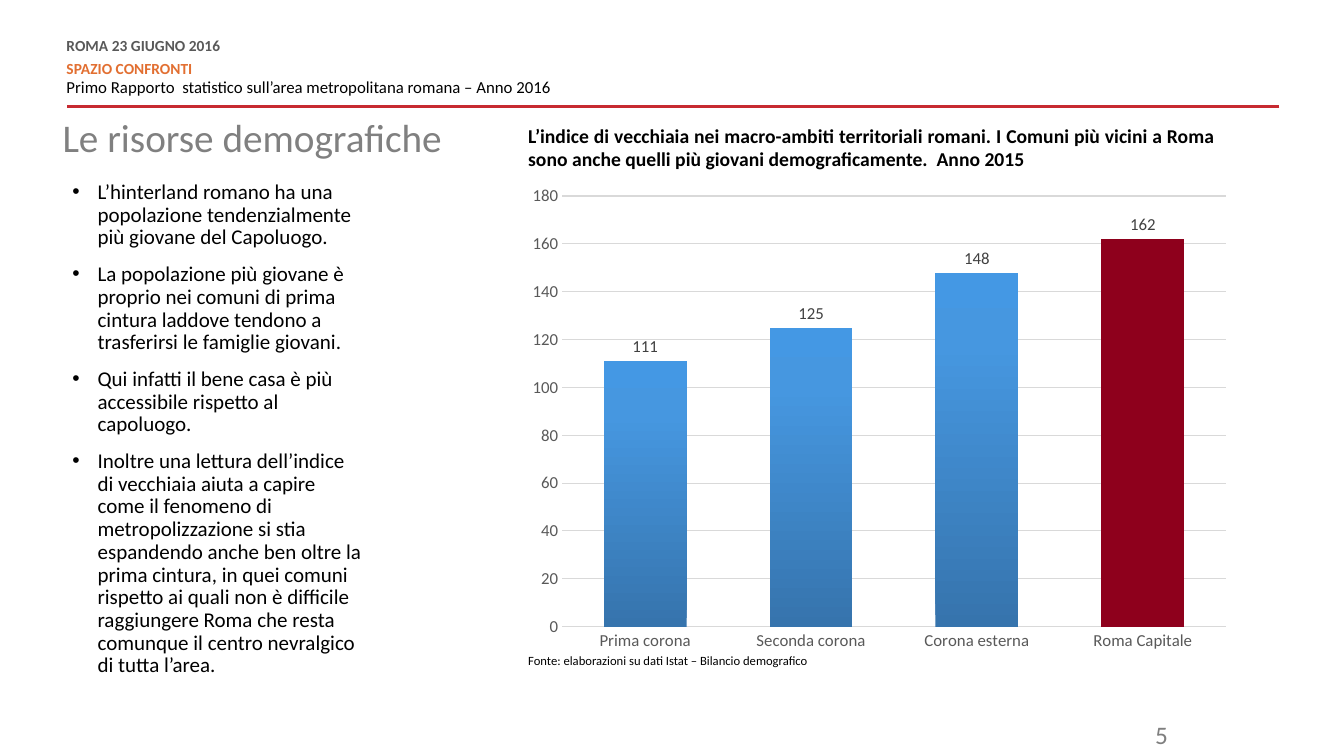
from copy import deepcopy

from pptx import Presentation
from pptx.chart.data import CategoryChartData
from pptx.dml.color import RGBColor
from pptx.enum.chart import XL_CHART_TYPE as ChartType, XL_LABEL_POSITION as LabelPosition
from pptx.enum.chart import XL_TICK_MARK as TickMark
from pptx.enum.shapes import MSO_CONNECTOR as Connector
from pptx.enum.text import PP_ALIGN as Align
from pptx.oxml.ns import qn
from pptx.oxml.xmlchemy import OxmlElement
from pptx.util import Inches, Pt

BLACK = RGBColor(0x00, 0x00, 0x00)
DARK_GRAY = RGBColor(0x59, 0x59, 0x59)
LABEL_GRAY = RGBColor(0x40, 0x40, 0x40)
TITLE_GRAY = RGBColor(0x80, 0x80, 0x80)
NUMBER_GRAY = RGBColor(0x7F, 0x7F, 0x7F)
GRID_GRAY = RGBColor(0xD9, 0xD9, 0xD9)
ORANGE = RGBColor(0xE2, 0x6F, 0x31)
RED = RGBColor(0xC7, 0x2A, 0x31)
DARK_RED = RGBColor(0x8E, 0x00, 0x1C)
BAR_GRADIENT = [
    (0, RGBColor(0x36, 0x74, 0xAD)),
    (0.8, RGBColor(0x46, 0x97, 0xE0)),
    (1, RGBColor(0x44, 0x98, 0xE4)),
]

BULLETS = [
    "L’hinterland romano ha una popolazione tendenzialmente più giovane del Capoluogo.",
    "La popolazione più giovane è proprio nei comuni di prima cintura laddove tendono a "
    "trasferirsi le famiglie giovani.",
    "Qui infatti il bene casa è più accessibile rispetto al capoluogo.",
    "Inoltre una lettura dell’indice di vecchiaia aiuta a capire come il fenomeno di "
    "metropolizzazione si stia espandendo anche ben oltre la prima cintura, in quei comuni "
    "rispetto ai quali non è difficile raggiungere Roma che resta comunque il centro "
    "nevralgico di tutta l’area.",
]
AGEING_INDEX = {"Prima corona": 111, "Seconda corona": 125, "Corona esterna": 148, "Roma Capitale": 162}


class SlideBuilder:
    """Draws text, lines and charts on one slide in a shared style."""

    font_name = "Calibri"

    def __init__(self, slide):
        self.slide = slide

    def style_font(self, font, size, color, bold=False):
        font.name = self.font_name
        font.size = Pt(size)
        font.bold = bold
        font.color.rgb = color

    def text_frame(self, left, top, width, height, inset=True):
        box = self.slide.shapes.add_textbox(Inches(left), Inches(top), Inches(width), Inches(height))
        frame = box.text_frame
        frame.word_wrap = True
        if not inset:
            frame.margin_left = frame.margin_right = frame.margin_top = frame.margin_bottom = 0
        return frame

    def paragraph(self, frame, text, size, color, bold=False, align=Align.LEFT,
                  spacing=None, before=0, after=0, bullet=False):
        paragraph = frame.paragraphs[0]
        if paragraph.text:
            paragraph = frame.add_paragraph()
            paragraph.space_before = Pt(before)
        paragraph.text = text
        paragraph.alignment = align
        paragraph.line_spacing = spacing
        paragraph.space_after = Pt(after)
        if bullet:
            properties = paragraph._p.get_or_add_pPr()
            properties.set("marL", str(Inches(0.25)))
            properties.set("indent", str(Inches(-0.25)))
            bullet_font = OxmlElement("a:buFont")
            bullet_font.set("typeface", "Arial")
            character = OxmlElement("a:buChar")
            character.set("char", "•")
            properties.extend([bullet_font, character])
        for run in paragraph.runs:
            self.style_font(run.font, size, color, bold)

    def label(self, bounds, text, size, color, inset=True, **style):
        self.paragraph(self.text_frame(*bounds, inset=inset), text, size, color, **style)

    def rule(self, left, right, top, color, width):
        line = self.slide.shapes.add_connector(
            Connector.STRAIGHT, Inches(right), Inches(top), Inches(left), Inches(top))
        line.line.color.rgb = color
        line.line.width = Pt(width)
        line._element.spPr.append(OxmlElement("a:effectLst"))

    def column_chart(self, left, top, width, height, values, highlight):
        data = CategoryChartData()
        data.categories = list(values)
        data.add_series("Indice di vecchiaia", list(values.values()))
        chart = self.slide.shapes.add_chart(
            ChartType.COLUMN_CLUSTERED, Inches(left), Inches(top),
            Inches(width), Inches(height), data).chart
        self.style_font(chart.font, 10, BLACK)
        chart.has_legend = False
        chart.has_title = False
        self.style_axes(chart)
        plot = chart.plots[0]
        plot.gap_width = 100
        plot.overlap = -24
        plot.vary_by_categories = False
        plot.has_data_labels = True
        labels = plot.data_labels
        labels.show_value = True
        labels.position = LabelPosition.OUTSIDE_END
        self.style_font(labels.font, 12, LABEL_GRAY)
        series = plot.series[0]
        self.fill_gradient(series)
        highlight_fill = series.points[highlight].format.fill
        highlight_fill.solid()
        highlight_fill.fore_color.rgb = DARK_RED

    def style_axes(self, chart):
        for axis in (chart.category_axis, chart.value_axis):
            axis.major_tick_mark = axis.minor_tick_mark = TickMark.NONE
            self.style_font(axis.tick_labels.font, 12, DARK_GRAY)
        category_line = chart.category_axis.format.line
        category_line.color.rgb = GRID_GRAY
        category_line.width = Pt(1)
        value_axis = chart.value_axis
        value_axis.minimum_scale = 0
        value_axis.maximum_scale = 180
        value_axis.major_unit = 20
        value_axis.format.line.fill.background()
        grid_line = value_axis.major_gridlines.format.line
        grid_line.color.rgb = GRID_GRAY
        grid_line.width = Pt(0.75)

    def fill_gradient(self, series):
        fill = series.format.fill
        fill.gradient()
        fill.gradient_angle = 90
        stop_list = next(series._element.iter(qn("a:gsLst")))
        stop_list.append(deepcopy(stop_list[-1]))
        for stop, (position, color) in zip(fill.gradient_stops, BAR_GRADIENT):
            stop.position = position
            stop.color.rgb = color


def main():
    presentation = Presentation()
    presentation.slide_width = Inches(13.33)
    presentation.slide_height = Inches(7.5)
    builder = SlideBuilder(presentation.slides.add_slide(presentation.slide_layouts[6]))

    builder.rule(0.66, 12.69, 1.06, RED, 2)
    header = builder.text_frame(0.66, 0.39, 5.2, 0.59, inset=False)
    spacing = Pt(10.8)
    builder.paragraph(header, "ROMA 23 GIUGNO 2016", 11, DARK_GRAY, bold=True, spacing=spacing, after=6)
    builder.paragraph(header, "SPAZIO CONFRONTI", 11, ORANGE, bold=True, spacing=spacing)
    builder.paragraph(header, "Primo Rapporto  statistico sull’area metropolitana romana – Anno 2016",
                      12, BLACK, spacing=spacing, before=3, after=6)

    builder.label((0.62, 1.18, 3.92, 0.5), "Le risorse demografiche", 28, TITLE_GRAY,
                  inset=False, spacing=0.9)
    body = builder.text_frame(0.62, 1.75, 3.1, 4.92)
    for text in BULLETS:
        builder.paragraph(body, text, 15, BLACK, spacing=0.9, before=10, bullet=True)

    builder.label((5.14, 1.18, 7.01, 0.57),
                  "L’indice di vecchiaia nei macro-ambiti territoriali romani. I Comuni più vicini a "
                  "Roma sono anche quelli più giovani demograficamente.  Anno 2015",
                  14, BLACK, bold=True, align=Align.JUSTIFY)
    builder.column_chart(5.14, 1.75, 7.16, 4.8, AGEING_INDEX, highlight=3)
    builder.label((5.14, 6.43, 7.01, 0.25),
                  "Fonte: elaborazioni su dati Istat – Bilancio demografico", 9, BLACK)
    builder.label((10.89, 7.09, 0.79, 0.35), "5", 18, NUMBER_GRAY, align=Align.RIGHT)

    presentation.save("out.pptx")


if __name__ == "__main__":
    main()
